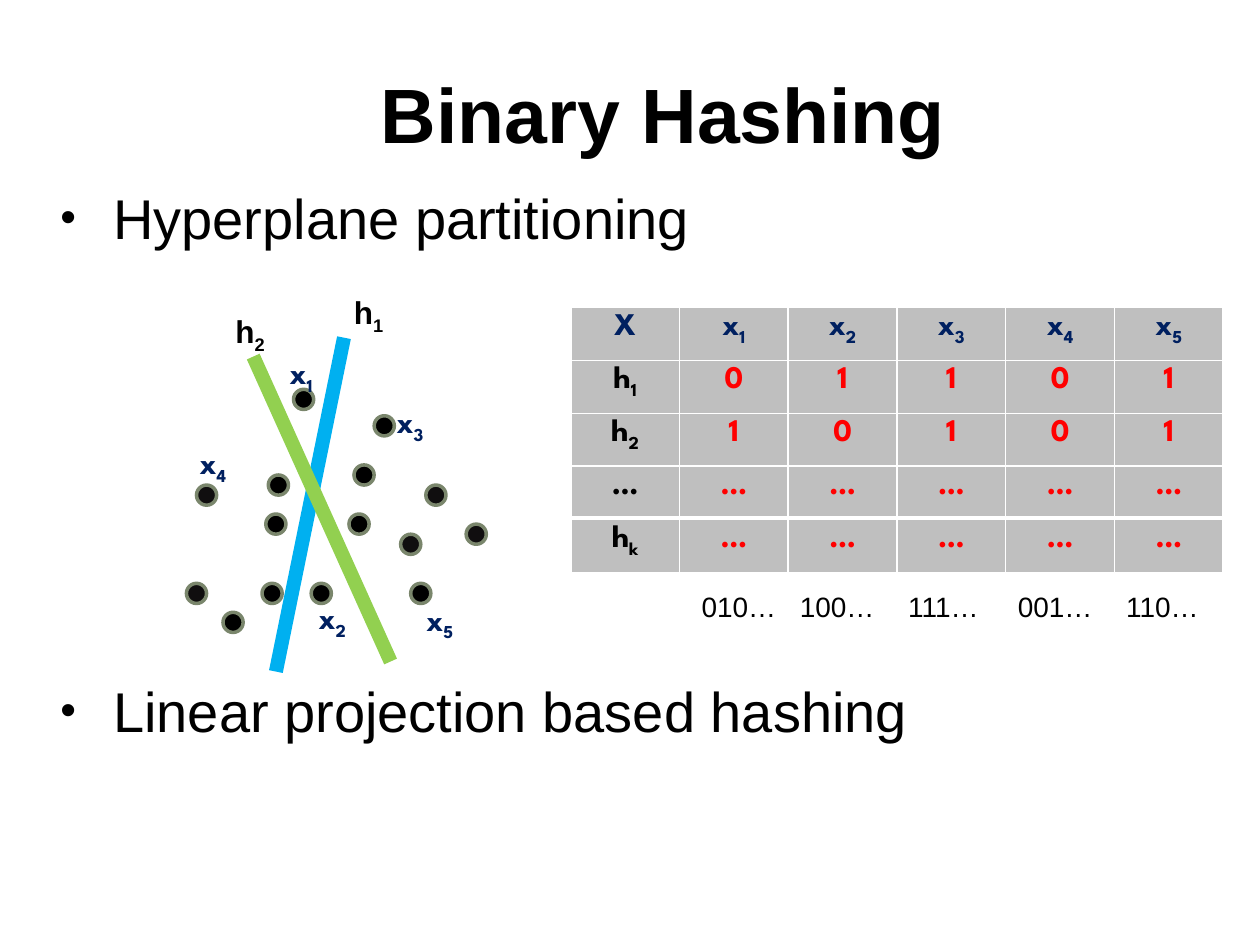
from pptx import Presentation
from pptx.dml.color import RGBColor
from pptx.enum.shapes import MSO_CONNECTOR, MSO_SHAPE
from pptx.enum.text import MSO_ANCHOR, MSO_AUTO_SIZE, PP_ALIGN
from pptx.oxml.ns import qn
from pptx.util import Inches, Pt
from lxml import etree

OVAL = MSO_SHAPE.OVAL
LINE = MSO_CONNECTOR.STRAIGHT
CENTER = PP_ALIGN.CENTER
LEFT = PP_ALIGN.LEFT
MIDDLE = MSO_ANCHOR.MIDDLE
TOP = MSO_ANCHOR.TOP
GROW = MSO_AUTO_SIZE.SHAPE_TO_FIT_TEXT
NO_FIT = MSO_AUTO_SIZE.NONE

SANS, SPARTAN = "Arial", "League Spartan"
BLACK, INK, NAVY, RED = "000000", "100E0F", "002060", "FF0000"
GRAY, RIM, WHITE = "BFBFBF", "7A866C", "FFFFFF"
BLUE, GREEN = "00B0F0", "92D050"


def rgb(code):
    return RGBColor.from_string(code)


class Board:
    def __init__(self, slide):
        self.slide = slide
        self.shapes = slide.shapes

    def put(self, para, text, size, color=BLACK, font=SANS, bold=False, align=LEFT):
        """Fill a paragraph; what follows an underscore is a subscript."""
        base, _, sub = text.partition("_")
        para.text = base
        para.alignment = align
        if sub:
            run = para.add_run()
            run.text = sub
            run._r.get_or_add_rPr().set("baseline", "-25000")
        for run in para.runs:
            run.font.size = Pt(size)
            run.font.name = font
            run.font.bold = bold
            run.font.color.rgb = rgb(color)

    def indent(self, para, left, first=0):
        props = para._p.get_or_add_pPr()
        props.set("marL", str(Inches(left)))
        props.set("indent", str(Inches(first)))
        return props

    def title(self, text, x, y, w, h):
        shape = self.shapes.title
        shape.left, shape.top = Inches(x), Inches(y)
        shape.width, shape.height = Inches(w), Inches(h)
        frame = shape.text_frame
        frame.auto_size = NO_FIT
        frame.vertical_anchor = MIDDLE
        para = frame.paragraphs[0]
        self.put(para, text, 44, bold=True, align=CENTER)
        self.indent(para, 0.53)

    def box(self, x, y, w, h, wrap=True):
        shape = self.shapes.add_textbox(Inches(x), Inches(y), Inches(w), Inches(h))
        frame = shape.text_frame
        frame.word_wrap = wrap
        return frame

    def label(self, text, x, y, w, h, wrap=True, size=18, **look):
        frame = self.box(x, y, w, h, wrap)
        frame.auto_size = GROW
        self.put(frame.paragraphs[0], text, size, **look)

    def bullets(self, items, x, y, w, h):
        frame = self.box(x, y, w, h)
        frame.auto_size = NO_FIT
        frame.vertical_anchor = TOP
        for i, (text, gap) in enumerate(items):
            para = frame.add_paragraph() if i else frame.paragraphs[0]
            self.put(para, text, 32)
            para.space_before = Pt(gap)
            props = self.indent(para, 0.49, -0.42)
            tint = etree.SubElement(props, qn("a:buClr"))
            etree.SubElement(tint, qn("a:srgbClr"), val=BLACK)
            etree.SubElement(props, qn("a:buSzPct"), val="80000")
            etree.SubElement(props, qn("a:buFont"), typeface=SANS)
            etree.SubElement(props, qn("a:buChar"), char="•")

    def dot(self, x, y, color):
        size = Inches(0.16)
        shape = self.shapes.add_shape(OVAL, Inches(x), Inches(y), size, size)
        shape.shadow.inherit = False
        shape.fill.solid()
        shape.fill.fore_color.rgb = rgb(color)
        shape.line.color.rgb = rgb(RIM)
        shape.line.width = Pt(2)

    def plane(self, x1, y1, x2, y2, color):
        line = self.shapes.add_connector(
            LINE, Inches(x1), Inches(y1), Inches(x2), Inches(y2))
        line.line.color.rgb = rgb(color)
        line.line.width = Pt(8)
        etree.SubElement(line._element.spPr, qn("a:effectLst"))

    def border(self, cell):
        props = cell._tc.get_or_add_tcPr()
        for side, width in (("L", 1), ("R", 1), ("T", 1), ("B", 3)):
            edge = etree.SubElement(props, qn("a:ln" + side), w=str(Pt(width)))
            fill = etree.SubElement(edge, qn("a:solidFill"))
            etree.SubElement(fill, qn("a:srgbClr"), val=WHITE)

    def strip(self, texts, x, y, w, h, colors):
        """One table row, with its own colour for each cell."""
        table = self.shapes.add_table(
            1, len(texts), Inches(x), Inches(y), Inches(w), Inches(h)).table
        table.first_row = table.horz_banding = False
        for cell, text, color in zip(table.rows[0].cells, texts, colors):
            self.border(cell)
            cell.fill.solid()
            cell.fill.fore_color.rgb = rgb(GRAY)
            para = cell.text_frame.paragraphs[0]
            self.put(para, text, 18, color, SPARTAN, True, CENTER)


def main():
    deck = Presentation()
    deck.slide_width, deck.slide_height = Inches(10), Inches(7.5)
    board = Board(deck.slides.add_slide(deck.slide_layouts[5]))

    # Title and bullets, with room for the figure between them
    board.title("Binary Hashing", 0.5, 0.29, 9, 1.21)
    board.bullets([("Hyperplane partitioning", 3),
                   ("Linear projection based hashing", 243)],
                  0.31, 1.41, 9.45, 5.78)

    # Data points
    dots = {
        BLACK: [(2.77, 4.08), (2.47, 4.63), (3.26, 4.63), (1.77, 4.86),
                (2.13, 3.77), (2.11, 4.08), (2.81, 3.69), (2.08, 4.63),
                (2.97, 3.3), (2.33, 3.09)],
        INK: [(3.38, 3.85), (3.7, 4.16), (1.56, 3.85), (3.18, 4.24),
              (1.48, 4.63)],
    }
    for color, spots in dots.items():
        for x, y in spots:
            board.dot(x, y, color)

    # Hyperplanes
    board.plane(2.73, 2.68, 2.19, 5.33, BLUE)
    board.plane(2.01, 2.83, 3.1, 5.25, GREEN)
    for text, x, y in (("h_1", 2.71, 2.28), ("h_2", 1.77, 2.43)):
        board.label(text, x, y, 0.55, 0.4, bold=True)

    # Point labels
    for text, x, y, align in (("x_1", 2.2, 2.75, LEFT), ("x_2", 2.43, 4.7, LEFT),
                              ("x_3", 3.05, 3.14, LEFT), ("x_4", 1.47, 3.47, CENTER),
                              ("x_5", 3.27, 4.71, CENTER)):
        board.label(text, x, y, 0.44, 0.4, wrap=False, color=NAVY,
                    font=SPARTAN, bold=True, align=align)

    # Hash table, one strip per row
    rows = [
        ["X", "x_1", "x_2", "x_3", "x_4", "x_5"],
        ["h_1", *"01101"],
        ["h_2", *"10101"],
        ["…"] * 6,
        ["h_k"] + ["…"] * 5,
    ]
    for i, texts in enumerate(rows):
        colors = [BLACK] + [RED] * 5 if i else [NAVY] * 6
        board.strip(texts, 4.53, 2.44 + 0.42 * i, 5.18, 0.41, colors)

    # Codes below the columns
    codes = ["010…", "100…", "111…", "001…", "110…"]
    for text, x in zip(codes, (5.47, 6.25, 7.11, 7.98, 8.84)):
        board.label(text, x, 4.63, 0.86, 0.37, size=16)

    deck.save("out.pptx")


if __name__ == "__main__":
    main()
